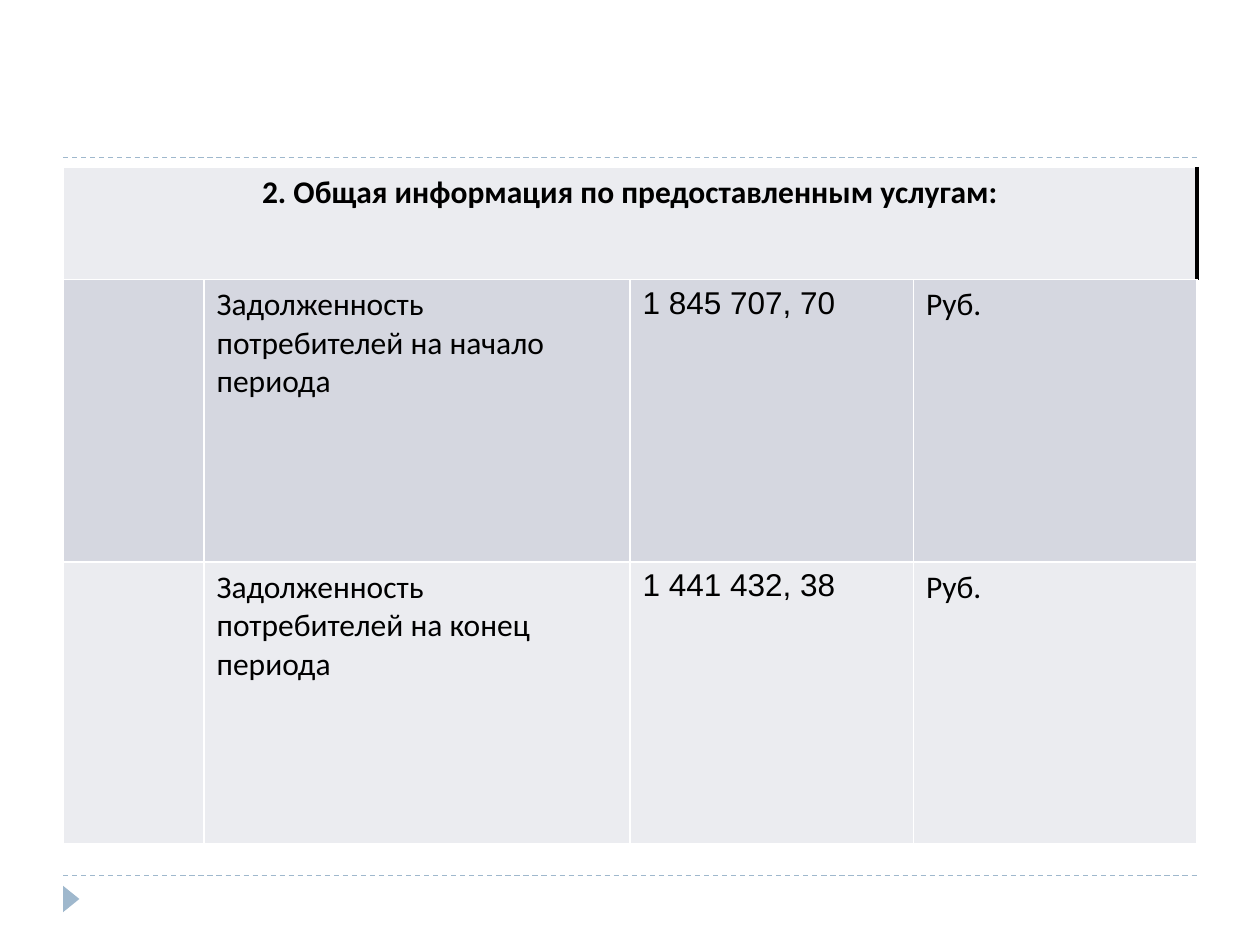
"""Builds a slide with a table of consumer debt at the start and end of the period."""
from lxml.etree import SubElement
from pptx import Presentation
from pptx.dml.color import RGBColor
from pptx.enum.dml import MSO_LINE
from pptx.enum.shapes import MSO_CONNECTOR, MSO_SHAPE
from pptx.enum.text import PP_ALIGN
from pptx.oxml.ns import qn
from pptx.util import Inches, Pt


def color(value):
    return RGBColor.from_string(value)


def add_border(cell, side, value, width):
    line = SubElement(cell._tc.get_or_add_tcPr(), qn(f"a:ln{side}"), w=str(Pt(width)))
    fill = SubElement(line, qn("a:solidFill"))
    SubElement(fill, qn("a:srgbClr"), val=value)


deck = Presentation()
deck.slide_width, deck.slide_height = Inches(10), Inches(7.5)
page = deck.slides.add_slide(deck.slide_layouts[6])

for y in (6.95, 1.25):
    rule = page.shapes.add_connector(
        MSO_CONNECTOR.STRAIGHT, Inches(0.5), Inches(y), Inches(9.5), Inches(y))
    rule.line.color.rgb = color("9FB8CD")
    rule.line.width = Pt(0.75)
    rule.line.dash_style = MSO_LINE.DASH
    SubElement(rule._element.spPr, qn("a:effectLst"))

marker = page.shapes.add_shape(
    MSO_SHAPE.ISOSCELES_TRIANGLE, Inches(0.46), Inches(7.07), Inches(0.21), Inches(0.13))
marker.rotation = 90
marker.shadow.inherit = False
marker.fill.solid()
marker.fill.fore_color.rgb = color("9FB8CD")
marker.line.fill.background()

rows = [
    ["2. Общая информация по предоставленным услугам:", "", "", ""],
    ["", "Задолженность потребителей на начало периода", "1 845 707, 70", "Руб."],
    ["", "Задолженность потребителей на конец периода", "1 441 432, 38", "Руб."],
]
row_heights = [0.89, 2.24, 2.24]
column_widths = [1.12, 3.38, 2.25, 2.25]
row_fills = ["EBECF0", "D5D7E0", "EBECF0"]

table = page.shapes.add_table(
    len(rows), len(column_widths), Inches(0.5), Inches(1.33), Inches(9), Inches(5.37)).table
for column, width in zip(table.columns, column_widths):
    column.width = Inches(width)
for row, height in zip(table.rows, row_heights):
    row.height = Inches(height)
table.cell(0, 0).merge(table.cell(0, 3))

for row_index, texts in enumerate(rows):
    heading = row_index == 0
    for column_index, text in enumerate(texts):
        cell = table.cell(row_index, column_index)
        for side in "LRTB":
            if heading and side == "R":
                add_border(cell, side, "000000", 2.25)
            else:
                add_border(cell, side, "FFFFFF", 1)
        cell.fill.solid()
        cell.fill.fore_color.rgb = color(row_fills[row_index])
        if text:
            para = cell.text_frame.paragraphs[0]
            para.alignment = PP_ALIGN.CENTER if heading else PP_ALIGN.LEFT
            span = para.add_run()
            span.text = text
            span.font.name = "Arial" if column_index == 2 else "Calibri"
            span.font.size = Pt(18)
            span.font.bold = heading
            span.font.color.rgb = color("000000")

deck.save("out.pptx")
